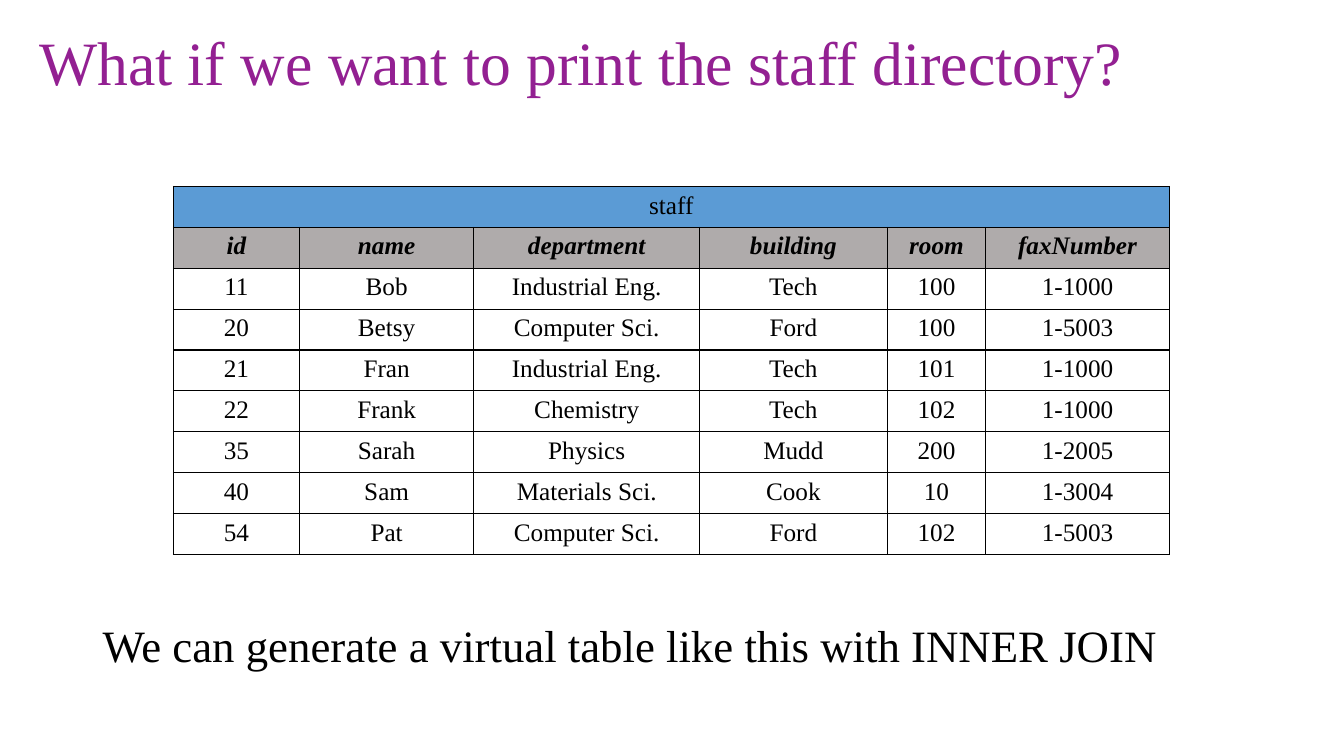
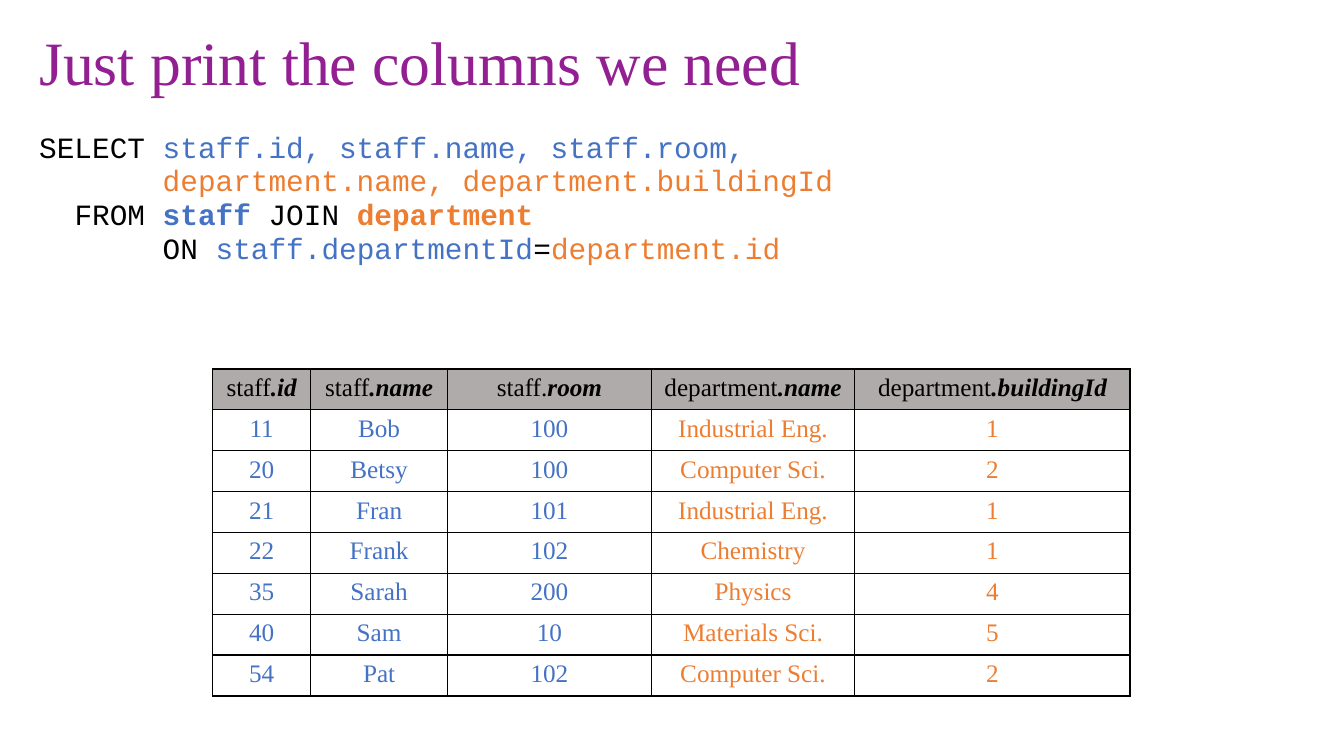
from typing import NamedTuple, Optional

from lxml.etree import SubElement
from pptx import Presentation
from pptx.dml.color import RGBColor
from pptx.enum.text import MSO_ANCHOR as Anchor, PP_ALIGN as Align
from pptx.oxml.ns import qn
from pptx.util import Emu, Inches, Pt

# Shared colours, fonts and sizes
PURPLE = RGBColor(0x93, 0x20, 0x92)
BLACK = RGBColor(0x00, 0x00, 0x00)
BLUE = RGBColor(0x44, 0x72, 0xC4)
ORANGE = RGBColor(0xED, 0x7D, 0x31)
BANNER = RGBColor(0x5B, 0x9B, 0xD5)
GREY = RGBColor(0xAF, 0xAB, 0xAB)
SERIF, MONO = "Times New Roman", "Courier New"
CODE_SIZE = 21
CODE_CHAR = 0.6 * CODE_SIZE  # width of one monospaced letter in points

# The slide is a grid of 100 columns and 100 rows
SLIDE_W, SLIDE_H = Inches(13.33), Inches(7.5)
ROW_H = 5.41


class Box(NamedTuple):
    left: float
    top: float
    width: float
    height: float


class Span(NamedTuple):
    text: str
    color: RGBColor = BLACK
    bold: bool = False
    italic: bool = False


class Line(NamedTuple):
    spans: list[Span]
    indent: int = 0  # in letters


class Cell(NamedTuple):
    spans: list[Span]
    fill: Optional[RGBColor] = None


class Staff(NamedTuple):
    id: str
    name: str
    department: str
    building: str
    room: str
    fax: str


TITLE_BOX = Box(2.18, 2.27, 95.5, 12.93)
NOTE_BOX = Box(6.9, 81.87, 86.27, 8.27)
QUERY_BOX = Box(2.18, 16.67, 95.5, 81.6)

STAFF = [
    Staff("11", "Bob", "Industrial Eng.", "Tech", "100", "1-1000"),
    Staff("20", "Betsy", "Computer Sci.", "Ford", "100", "1-5003"),
    Staff("21", "Fran", "Industrial Eng.", "Tech", "101", "1-1000"),
    Staff("22", "Frank", "Chemistry", "Tech", "102", "1-1000"),
    Staff("35", "Sarah", "Physics", "Mudd", "200", "1-2005"),
    Staff("40", "Sam", "Materials Sci.", "Cook", "10", "1-3004"),
    Staff("54", "Pat", "Computer Sci.", "Ford", "102", "1-5003"),
]
BUILDING_IDS = {"Tech": "1", "Ford": "2", "Mudd": "4", "Cook": "5"}

QUERY = [
    Line([Span("SELECT "), Span("staff.id, staff.name, staff.room,", BLUE)]),
    Line([Span("department.name, department.buildingId", ORANGE)], 7),
    Line([Span("FROM "), Span("staff ", BLUE, True), Span("JOIN "),
          Span("department", ORANGE, True)], 2),
    Line([Span("ON "), Span("staff.departmentId", BLUE), Span("="),
          Span("department.id", ORANGE)], 7),
]


def col(n: float) -> Emu:
    return Emu(round(SLIDE_W * n / 100))


def row(n: float) -> Emu:
    return Emu(round(SLIDE_H * n / 100))


def add_spans(p, spans: list[Span], size: float, font: str) -> None:
    for span in spans:
        r = p.add_run()
        r.text = span.text
        fmt = {"name": font, "size": Pt(size), "bold": span.bold, "italic": span.italic}
        for key, value in fmt.items():
            setattr(r.font, key, value)
        r.font.color.rgb = span.color


def add_text(s, box: Box, lines: list[Line], size: float, font: str = SERIF,
             anchor: Anchor = Anchor.TOP, spacing: float = 0.9) -> None:
    tf = s.shapes.add_textbox(col(box.left), row(box.top),
                              col(box.width), row(box.height)).text_frame
    for key, value in {"word_wrap": True, "vertical_anchor": anchor}.items():
        setattr(tf, key, value)
    for i, line in enumerate(lines):
        p = tf.add_paragraph() if i else tf.paragraphs[0]
        p.line_spacing = spacing
        if line.indent:
            p._p.get_or_add_pPr().set("marL", str(Pt(line.indent * CODE_CHAR)))
        add_spans(p, line.spans, size, font)


def add_borders(cell) -> None:
    tc_pr = cell._tc.get_or_add_tcPr()
    for side in ("lnL", "lnR", "lnT", "lnB"):
        ln = SubElement(tc_pr, qn(f"a:{side}"), w=str(Pt(1)))
        fill = SubElement(ln, qn("a:solidFill"))
        SubElement(fill, qn("a:srgbClr"), val=str(BLACK))


def add_grid(s, left: float, top: float, widths: list[float],
             rows: list[list[Cell]]) -> None:
    """Draw a bordered table; a row with a single cell spans every column."""
    tbl = s.shapes.add_table(len(rows), len(widths), col(left), row(top),
                             col(sum(widths)), row(ROW_H * len(rows))).table
    for key in ("first_row", "horz_banding"):
        setattr(tbl, key, False)
    for column, width in zip(tbl.columns, widths):
        column.width = col(width)
    for i, cells in enumerate(rows):
        tbl.rows[i].height = row(ROW_H)
        for j in range(len(widths)):
            add_borders(tbl.cell(i, j))
        if len(cells) == 1:
            tbl.cell(i, 0).merge(tbl.cell(i, len(widths) - 1))
        for j, content in enumerate(cells):
            cell = tbl.cell(i, j)
            if content.fill is None:
                cell.fill.background()
            else:
                cell.fill.solid()
                cell.fill.fore_color.rgb = content.fill
            p = cell.text_frame.paragraphs[0]
            p.alignment = Align.CENTER
            add_spans(p, content.spans, 18, SERIF)


def header(plain: str, strong: str) -> Cell:
    spans = [Span(plain)] if plain else []
    return Cell(spans + [Span(strong, bold=True, italic=True)], GREY)


def new_slide(prs, title: str):
    s = prs.slides.add_slide(prs.slide_layouts[6])
    add_text(s, TITLE_BOX, [Line([Span(title, PURPLE)])], 44, anchor=Anchor.MIDDLE)
    return s


def directory_slide(prs) -> None:
    s = new_slide(prs, "What if we want to print the staff directory?")
    names = ["id", "name", "department", "building", "room", "faxNumber"]
    rows = [[Cell([Span("staff")], BANNER)], [header("", name) for name in names]]
    rows += [[Cell([Span(value)]) for value in person] for person in STAFF]
    add_grid(s, 12.9, 24.67, [9.38, 12.98, 16.8, 13.95, 7.35, 13.65], rows)
    note = "We can generate a virtual table like this with INNER JOIN"
    add_text(s, NOTE_BOX, [Line([Span(note)])], 32)


def columns_slide(prs) -> None:
    s = new_slide(prs, "Just print the columns we need")
    add_text(s, QUERY_BOX, QUERY, CODE_SIZE, MONO, spacing=0.96)
    rows = [[header("staff", ".id"), header("staff", ".name"), header("staff.", "room"),
             header("department", ".name"), header("department", ".buildingId")]]
    for person in STAFF:
        own = [person.id, person.name, person.room]
        joined = [person.department, BUILDING_IDS[person.building]]
        rows.append([Cell([Span(v, BLUE)]) for v in own]
                    + [Cell([Span(v, ORANGE)]) for v in joined])
    add_grid(s, 15.83, 48.8, [7.28, 10.2, 15.15, 15.15, 20.48], rows)


def main() -> None:
    prs = Presentation()
    prs.slide_width, prs.slide_height = SLIDE_W, SLIDE_H
    directory_slide(prs)
    columns_slide(prs)
    prs.save("out.pptx")


if __name__ == "__main__":
    main()
